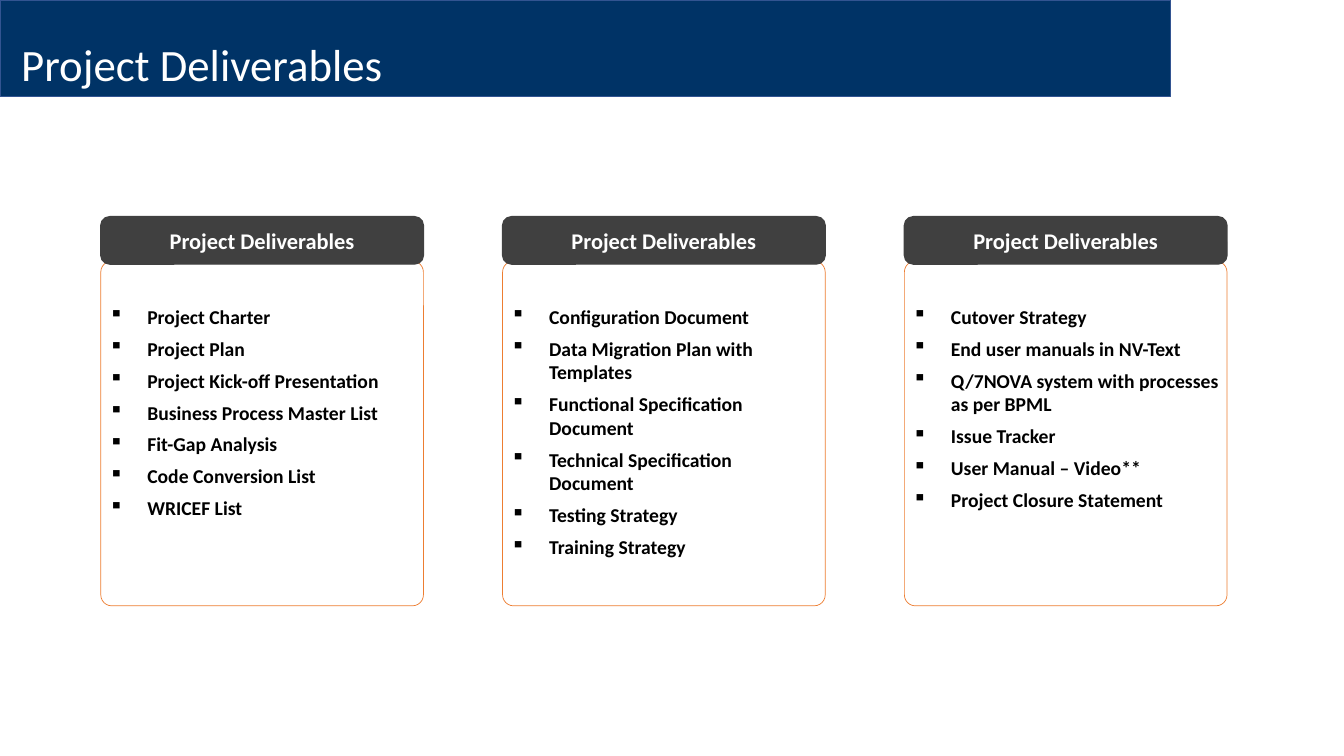
"""Build the Project Deliverables slide with three bulleted cards."""
from lxml import etree
from pptx import Presentation
from pptx.dml.color import RGBColor
from pptx.enum.shapes import MSO_SHAPE
from pptx.enum.text import MSO_ANCHOR, PP_ALIGN
from pptx.oxml.ns import qn
from pptx.util import Inches, Pt

RECTANGLE = MSO_SHAPE.RECTANGLE
ROUNDED = MSO_SHAPE.ROUNDED_RECTANGLE
TOP, MIDDLE, BOTTOM = MSO_ANCHOR.TOP, MSO_ANCHOR.MIDDLE, MSO_ANCHOR.BOTTOM
LEFT, CENTER = PP_ALIGN.LEFT, PP_ALIGN.CENTER

TITLE = "Project Deliverables"
CARD_HEADING = "Project Deliverables"
CARDS = [
    [
        "Project Charter",
        "Project Plan",
        "Project Kick-off Presentation",
        "Business Process Master List",
        "Fit-Gap Analysis",
        "Code Conversion List",
        "WRICEF List",
    ],
    [
        "Configuration Document",
        "Data Migration Plan with Templates",
        "Functional Specification Document",
        "Technical Specification Document",
        "Testing Strategy",
        "Training Strategy",
    ],
    [
        "Cutover Strategy",
        "End user manuals in NV-Text",
        "Q/7NOVA system with processes as per BPML",
        "Issue Tracker",
        "User Manual – Video**",
        "Project Closure Statement",
    ],
]

FONT = "Calibri"
NAVY, NAVY_EDGE = "003366", "325491"
WHITE, BLACK, CHARCOAL, ORANGE = "FFFFFF", "000000", "404040", "ED7D31"
CARD_LEFT, CARD_STEP, CARD_WIDTH = 1, 3.985, 3.2
HEADING_TOP, HEADING_HEIGHT = 2.15, 0.47
BODY_TOP, BODY_HEIGHT = 2.59, 3.42
BULLET_INDENT = 0.38


def color(hex_string):
    return RGBColor.from_string(hex_string)


def add_box(slide, kind, bounds, fill, line, line_width, corner=None):
    shape = slide.shapes.add_shape(kind, *map(Inches, bounds))
    shape.shadow.inherit = False
    shape.fill.solid()
    shape.fill.fore_color.rgb = color(fill)
    shape.line.color.rgb = color(line)
    shape.line.width = Pt(line_width)
    if corner is not None:
        shape.adjustments[0] = corner
    return shape


def set_text(shape, text, size, font_color, bold, alignment, anchor):
    frame = shape.text_frame
    frame.text = text
    frame.word_wrap = True
    frame.vertical_anchor = anchor
    for paragraph in frame.paragraphs:
        paragraph.alignment = alignment
        for run in paragraph.runs:
            run.font.name = FONT
            run.font.size = Pt(size)
            run.font.bold = bold
            run.font.color.rgb = color(font_color)
    return frame


def add_bullet(paragraph):
    properties = paragraph._p.get_or_add_pPr()
    properties.set("marL", str(Inches(BULLET_INDENT)))
    properties.set("indent", str(-Inches(BULLET_INDENT)))
    etree.SubElement(properties, qn("a:buChar")).set("char", "▪")
    paragraph.space_after = Pt(6)


def add_title(slide):
    banner = add_box(slide, RECTANGLE, (0, 0, 11.61, 0.96), NAVY, NAVY_EDGE, 1)
    title = slide.shapes.title
    banner._element.addnext(title._element)
    title.left, title.top, title.width, title.height = map(
        Inches, (0.11, 0.08, 11.5, 0.88))
    frame = set_text(title, TITLE, 32, WHITE, False, LEFT, BOTTOM)
    frame.paragraphs[0].line_spacing = 0.9


def add_card(slide, left, items):
    body = add_box(slide, ROUNDED, (left, BODY_TOP, CARD_WIDTH, BODY_HEIGHT),
                   WHITE, ORANGE, 0.5, 0.034)
    frame = set_text(body, "\n".join(items), 14, BLACK, True, LEFT, TOP)
    frame.margin_left = frame.margin_right = frame.margin_bottom = Inches(0.05)
    frame.margin_top = Inches(0.4)
    for paragraph in frame.paragraphs:
        add_bullet(paragraph)

    heading = add_box(slide, ROUNDED, (left, HEADING_TOP, CARD_WIDTH, HEADING_HEIGHT),
                      CHARCOAL, CHARCOAL, 1, 0.188)
    set_text(heading, CARD_HEADING, 16, WHITE, True, CENTER, MIDDLE)


def main():
    presentation = Presentation()
    presentation.slide_width = Inches(13.33)
    presentation.slide_height = Inches(7.5)
    slide = presentation.slides.add_slide(presentation.slide_layouts[5])
    add_title(slide)
    for index, items in enumerate(CARDS):
        add_card(slide, CARD_LEFT + index * CARD_STEP, items)
    presentation.save("out.pptx")


if __name__ == "__main__":
    main()
